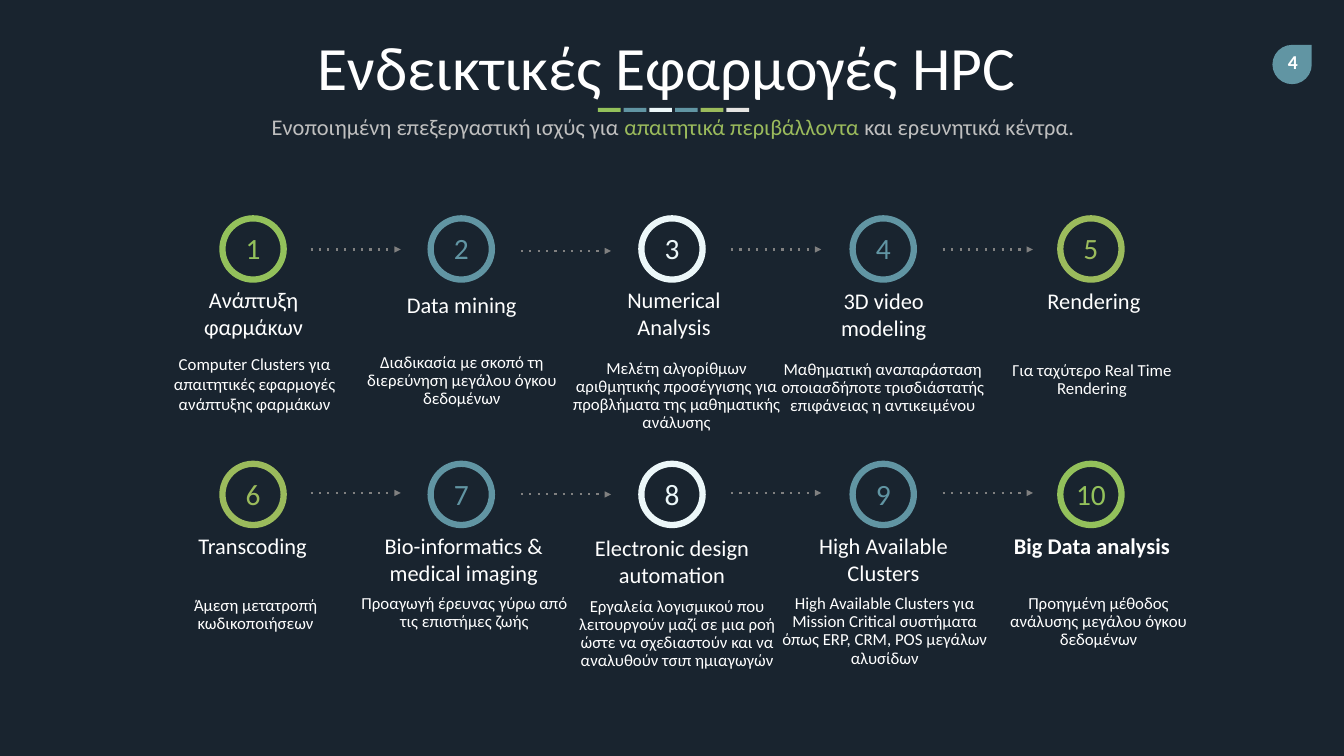
from lxml import etree
from pptx import Presentation
from pptx.dml.color import RGBColor
from pptx.enum.shapes import MSO_CONNECTOR, MSO_SHAPE
from pptx.enum.text import MSO_ANCHOR, MSO_AUTO_SIZE, PP_ALIGN
from pptx.oxml.ns import qn
from pptx.util import Inches, Pt

COLORS = {
    "background": "19242F", "white": "FFFFFF", "green": "93C15B", "olive": "9BBB5C",
    "teal": "6195A3", "ice": "ECF7F9", "stone": "E5E4E1", "gray": "808080", "silver": "BFBFBF",
}
FONT = "Calibri"

TITLE = "Ενδεικτικές Εφαρμογές HPC"
SUBTITLE = [
    ("Ενοποιημένη επεξεργαστική ισχύς για ", "silver"),
    ("απαιτητικά περιβάλλοντα ", "olive"),
    ("και ερευνητικά κέντρα.", "silver"),
]
PAGE_NUMBER = "4"
DASH_COLORS = ["green", "teal", "ice", "teal", "olive", "stone"]

# Heading, its (left, top, width); description, its (left, top); colour
APPLICATIONS = [
    ("Ανάπτυξη φαρμάκων", (3.58, 5.58, 2.9),
     "Computer Clusters για απαιτητικές εφαρμογές ανάπτυξης φαρμάκων", (2.76, 6.92), "green"),
    ("Data mining", (7.28, 5.68, 3.76),
     "Διαδικασία με σκοπό τη διερεύνηση μεγάλου όγκου δεδομένων", (6.87, 6.92), "teal"),
    ("Numerical Analysis", (11.92, 5.57, 2.9),
     "Μελέτη αλγορίθμων αριθμητικής προσέγγισης για προβλήματα της μαθηματικής ανάλυσης",
     (11.13, 7.04), "ice"),
    ("3D video modeling", (15.76, 5.59, 3.54),
     "Μαθηματική αναπαράσταση οποιασδήποτε τρισδιάστατής επιφάνειας η αντικειμένου",
     (15.22, 7.06), "teal"),
    ("Rendering", (19.41, 5.59, 4.58),
     "Για ταχύτερο Real Time Rendering", (19.37, 7.08), "olive"),
    ("Transcoding", (3.49, 10.46, 3.04),
     "Άμεση μετατροπή κωδικοποιήσεων", (2.78, 11.75), "olive"),
    ("Bio-informatics & medical imaging", (7.13, 10.45, 4.14),
     "Προαγωγή έρευνας γύρω από τις επιστήμες ζωής", (6.92, 11.71), "teal"),
    ("Electronic design automation", (11.46, 10.49, 3.74),
     "Εργαλεία λογισμικού που λειτουργούν μαζί σε μια ροή ώστε να σχεδιαστούν "
     "και να αναλυθούν τσιπ ημιαγωγών", (11.14, 11.76), "ice"),
    ("High Available Clusters", (15.91, 10.46, 3.23),
     "High Available Clusters για Mission Critical συστήματα όπως ERP, CRM, POS μεγάλων αλυσίδων",
     (15.26, 11.71), "teal"),
    ("Big Data analysis", (19.71, 10.46, 3.9),
     "Προηγμένη μέθοδος ανάλυσης μεγάλου όγκου δεδομένων", (19.5, 11.71), "green"),
]
BOLD_HEADING = "Big Data analysis"

RING_LEFTS = [4.35, 8.48, 12.66, 16.85, 20.97]
RING_TOPS = [4.27, 9.14]
RING_SIZE, RING_THICKNESS = 1.34, 0.125
NUMBER_WIDTH, NUMBER_HEIGHT = 1.14, 0.91
DESCRIPTION_WIDTH, DESCRIPTION_HEIGHT = 4.58, 1.36
ARROW_LEFTS = [6.16, 10.33, 14.5, 18.7]
ARROW_DROPS = [0, 0.03, 0, 0]
ARROW_TOPS = [4.95, 9.78]
ARROW_LENGTH = 1.79


def rgb(name):
    return RGBColor.from_string(COLORS[name])


def write(shape, runs, size, bold=False, spacing=None, margins=(0.2, 0.1)):
    """Fill a shape with one centred paragraph of (text, colour) runs."""
    frame = shape.text_frame
    frame.word_wrap = True
    frame.auto_size = MSO_AUTO_SIZE.NONE
    frame.vertical_anchor = MSO_ANCHOR.TOP
    frame.margin_left = frame.margin_right = Inches(margins[0])
    frame.margin_top = frame.margin_bottom = Inches(margins[1])
    para = frame.paragraphs[0]
    para.alignment = PP_ALIGN.CENTER
    para.line_spacing = spacing
    para.font.name, para.font.size, para.font.bold = FONT, Pt(size), bold
    for text, color in runs:
        span = para.add_run()
        span.text = text
        span.font.color.rgb = rgb(color)


def add_text(slide, place, runs, size, **style):
    box = slide.shapes.add_textbox(*map(Inches, place))
    write(box, runs, size, **style)


def add_filled(slide, kind, place, color):
    shape = slide.shapes.add_shape(kind, *map(Inches, place))
    shape.shadow.inherit = False
    shape.fill.solid()
    shape.fill.fore_color.rgb = rgb(color)
    shape.line.fill.background()
    return shape


def add_dotted_arrow(slide, left, top):
    arrow = slide.shapes.add_connector(
        MSO_CONNECTOR.STRAIGHT, *map(Inches, (left, top, left + ARROW_LENGTH, top)))
    arrow.line.color.rgb = rgb("gray")
    arrow.line.width = Pt(3)
    properties = arrow.element.spPr
    line = properties.find(qn("a:ln"))
    etree.SubElement(line, qn("a:prstDash"), val="dot")
    etree.SubElement(line, qn("a:tailEnd"), type="triangle")
    etree.SubElement(properties, qn("a:effectLst"))


def add_application(slide, index, application):
    heading, heading_place, description, description_place, color = application
    row, column = divmod(index, len(RING_LEFTS))
    left, top = RING_LEFTS[column], RING_TOPS[row]

    ring = add_filled(slide, MSO_SHAPE.DONUT, (left, top, RING_SIZE, RING_SIZE), color)
    ring.adjustments[0] = RING_THICKNESS / RING_SIZE
    number_left = left + (RING_SIZE - NUMBER_WIDTH) / 2
    add_text(slide, (number_left, top + 0.2, NUMBER_WIDTH, NUMBER_HEIGHT),
             [(str(index + 1), color)], 42)
    add_text(slide, (*heading_place, 1.28), [(heading, "white")], 32,
             bold=heading == BOLD_HEADING)
    add_text(slide, (*description_place, DESCRIPTION_WIDTH, DESCRIPTION_HEIGHT),
             [(description, "white")], 24, spacing=0.9 if index else 1.0)


def main():
    deck = Presentation()
    deck.slide_width, deck.slide_height = Inches(26.66), Inches(15)
    slide = deck.slides.add_slide(deck.slide_layouts[5])
    slide.background.fill.solid()
    slide.background.fill.fore_color.rgb = rgb("background")

    title = slide.shapes.title
    title.left, title.top, title.width, title.height = map(Inches, (1.77, 0.53, 22.9, 1.58))
    write(title, [(TITLE, "white")], 88, margins=(0.1, 0.05))
    add_text(slide, (1.9, 2.2, 22.9, 0.64), SUBTITLE, 32, margins=(0.1, 0.05))
    for index, color in enumerate(DASH_COLORS):
        add_filled(slide, MSO_SHAPE.RECTANGLE, (11.86 + index * 0.51, 2.14, 0.45, 0.08), color)

    add_filled(slide, MSO_SHAPE.TEAR, (25.24, 0.89, 0.78, 0.78), "teal")
    add_text(slide, (25.21, 0.9, 0.87, 0.67), [(PAGE_NUMBER, "white")], 28, bold=True)

    for index, application in enumerate(APPLICATIONS):
        add_application(slide, index, application)
    for top in ARROW_TOPS:
        for left, drop in zip(ARROW_LEFTS, ARROW_DROPS):
            add_dotted_arrow(slide, left, top + drop)

    deck.save("out.pptx")


if __name__ == "__main__":
    main()
